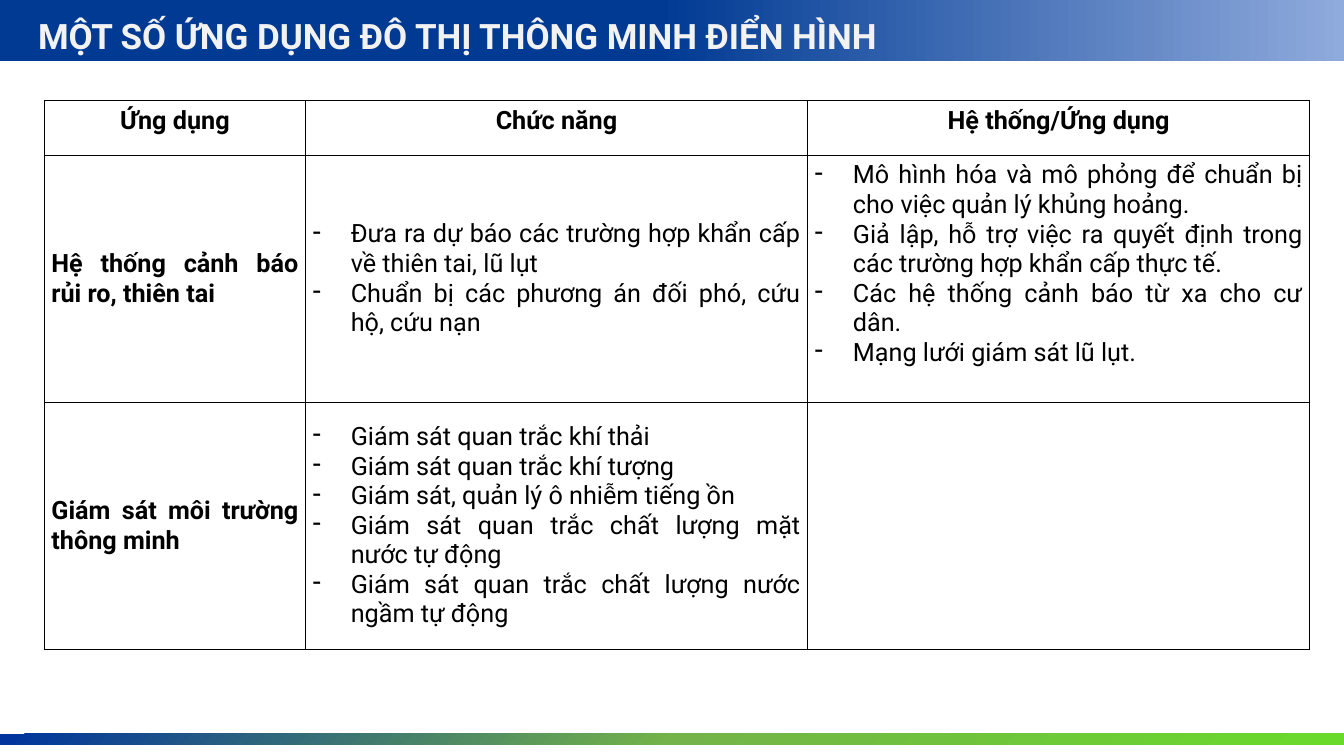
from lxml import etree
from pptx import Presentation
from pptx.dml.color import RGBColor
from pptx.enum.shapes import MSO_SHAPE
from pptx.enum.text import MSO_ANCHOR, PP_ALIGN
from pptx.oxml.ns import qn
from pptx.util import Inches, Pt

RECTANGLE = MSO_SHAPE.RECTANGLE
TOP, MIDDLE = MSO_ANCHOR.TOP, MSO_ANCHOR.MIDDLE
LEFT, CENTER, JUSTIFY = PP_ALIGN.LEFT, PP_ALIGN.CENTER, PP_ALIGN.JUSTIFY
WIDTH, HEIGHT = 13.33, 7.5
COLUMN_WIDTHS = [2.59, 4.98, 4.98]
ROW_HEIGHTS = [0.54, 2.45, 2.45]

HEADINGS = ["Ứng dụng", "Chức năng", "Hệ thống/Ứng dụng"]
APPLICATIONS = [
    ("Hệ thống cảnh báo rủi ro, thiên tai",
     ["Đưa ra dự báo các trường hợp khẩn cấp về thiên tai, lũ lụt",
      "Chuẩn bị các phương án đối phó, cứu hộ, cứu nạn"],
     ["Mô hình hóa và mô phỏng để chuẩn bị cho việc quản lý khủng hoảng.",
      "Giả lập, hỗ trợ việc ra quyết định trong các trường hợp khẩn cấp thực tế.",
      "Các hệ thống cảnh báo từ xa cho cư dân.",
      "Mạng lưới giám sát lũ lụt."]),
    ("Giám sát môi trường thông minh",
     ["Giám sát quan trắc khí thải",
      "Giám sát quan trắc khí tượng",
      "Giám sát, quản lý ô nhiễm tiếng ồn",
      "Giám sát quan trắc chất lượng mặt nước tự động",
      "Giám sát quan trắc chất lượng nước ngầm tự động"],
     []),
]


def rgb(value):
    return RGBColor.from_string(value)


def add_child(parent, tag, **attributes):
    return etree.SubElement(parent, qn(tag), **attributes)


def write_text(frame, lines, *, font, size=18, color="000000", bold=False,
               align=LEFT, spacing=None, dashed=False):
    for index, line in enumerate(lines):
        paragraph = frame.paragraphs[0] if index == 0 else frame.add_paragraph()
        paragraph.alignment = align
        if spacing:
            paragraph.line_spacing = spacing
        if dashed:
            properties = paragraph._p.get_or_add_pPr()
            properties.set("marL", str(Inches(0.38)))
            properties.set("indent", str(-Inches(0.38)))
            add_child(properties, "a:buChar", char="-")
        run = paragraph.add_run()
        run.text = line
        run.font.name = font
        run.font.size = Pt(size)
        run.font.bold = bold
        run.font.color.rgb = rgb(color)


class SlideBuilder:
    font = "Roboto"
    border = "000000"

    def __init__(self, slide):
        self.slide = slide

    def gradient_bar(self, top, height, stops, from_corner=False):
        """Full-width bar, shaded left to right or outward from the bottom right corner."""
        bar = self.slide.shapes.add_shape(
            RECTANGLE, Inches(0), Inches(top), Inches(WIDTH), Inches(height))
        bar.shadow.inherit = False
        bar.line.fill.background()
        bar.fill.background()
        shading = etree.Element(qn("a:gradFill"), rotWithShape="1")
        stop_list = add_child(shading, "a:gsLst")
        for percent, color in stops:
            stop = add_child(stop_list, "a:gs", pos=str(percent * 1000))
            add_child(stop, "a:srgbClr", val=color)
        if from_corner:
            circle = add_child(shading, "a:path", path="circle")
            add_child(circle, "a:fillToRect", l="100000", t="100000")
        else:
            add_child(shading, "a:lin", ang="0", scaled="0")
        properties = bar._element.spPr
        properties.replace(properties.find(qn("a:noFill")), shading)

    def title(self, text, left, top, width, height):
        box = self.slide.shapes.add_textbox(
            Inches(left), Inches(top), Inches(width), Inches(height))
        box.text_frame.word_wrap = True
        write_text(box.text_frame, [text], font=self.font, size=25,
                   color="F2F2F2", bold=True, spacing=1.3)

    def table(self, left, top):
        grid = self.slide.shapes.add_table(
            len(ROW_HEIGHTS), len(COLUMN_WIDTHS), Inches(left), Inches(top),
            Inches(sum(COLUMN_WIDTHS)), Inches(sum(ROW_HEIGHTS))).table
        grid.first_row = grid.horz_banding = False
        for column, width in zip(grid.columns, COLUMN_WIDTHS):
            column.width = Inches(width)
        for row, height in zip(grid.rows, ROW_HEIGHTS):
            row.height = Inches(height)
        return grid

    def cell(self, cell, lines, anchor=MIDDLE, **text_format):
        cell.fill.background()
        cell.vertical_anchor = anchor
        if anchor == MIDDLE:
            cell.margin_left = cell.margin_right = Inches(0.07)
            cell.margin_top = cell.margin_bottom = Inches(0)
        properties = cell._tc.get_or_add_tcPr()
        for index, side in enumerate(("a:lnL", "a:lnR", "a:lnT", "a:lnB")):
            edge = etree.Element(qn(side), w=str(Pt(1)))
            add_child(add_child(edge, "a:solidFill"), "a:srgbClr", val=self.border)
            properties.insert(index, edge)
        write_text(cell.text_frame, lines, font=self.font, **text_format)


def main():
    deck = Presentation()
    deck.slide_width, deck.slide_height = Inches(WIDTH), Inches(HEIGHT)
    builder = SlideBuilder(deck.slides.add_slide(deck.slide_layouts[6]))

    applications = builder.table(0.44, 1)
    for column, heading in enumerate(HEADINGS):
        builder.cell(applications.cell(0, column), [heading], anchor=TOP,
                     bold=True, align=CENTER)
    for row, (name, functions, systems) in enumerate(APPLICATIONS, start=1):
        builder.cell(applications.cell(row, 0), [name], bold=True, align=JUSTIFY)
        for column, items in enumerate((functions, systems), start=1):
            builder.cell(applications.cell(row, column), items,
                         align=JUSTIFY, dashed=True)
    # The list of warning systems sits one line above the middle of its row.
    applications.cell(1, 2).margin_bottom = Inches(0.29)

    builder.gradient_bar(0, 0.61, [(0, "013A92"), (49, "003A93"), (100, "8FAADC")])
    builder.title("MỘT SỐ ỨNG DỤNG ĐÔ THỊ THÔNG MINH ĐIỂN HÌNH",
                  0.28, -0.03, 12.77, 0.63)
    builder.gradient_bar(7.28, 0.11, [(0, "69DA2A"), (50, "74B349"), (99, "01359D")],
                         from_corner=True)
    deck.save("out.pptx")


if __name__ == "__main__":
    main()
